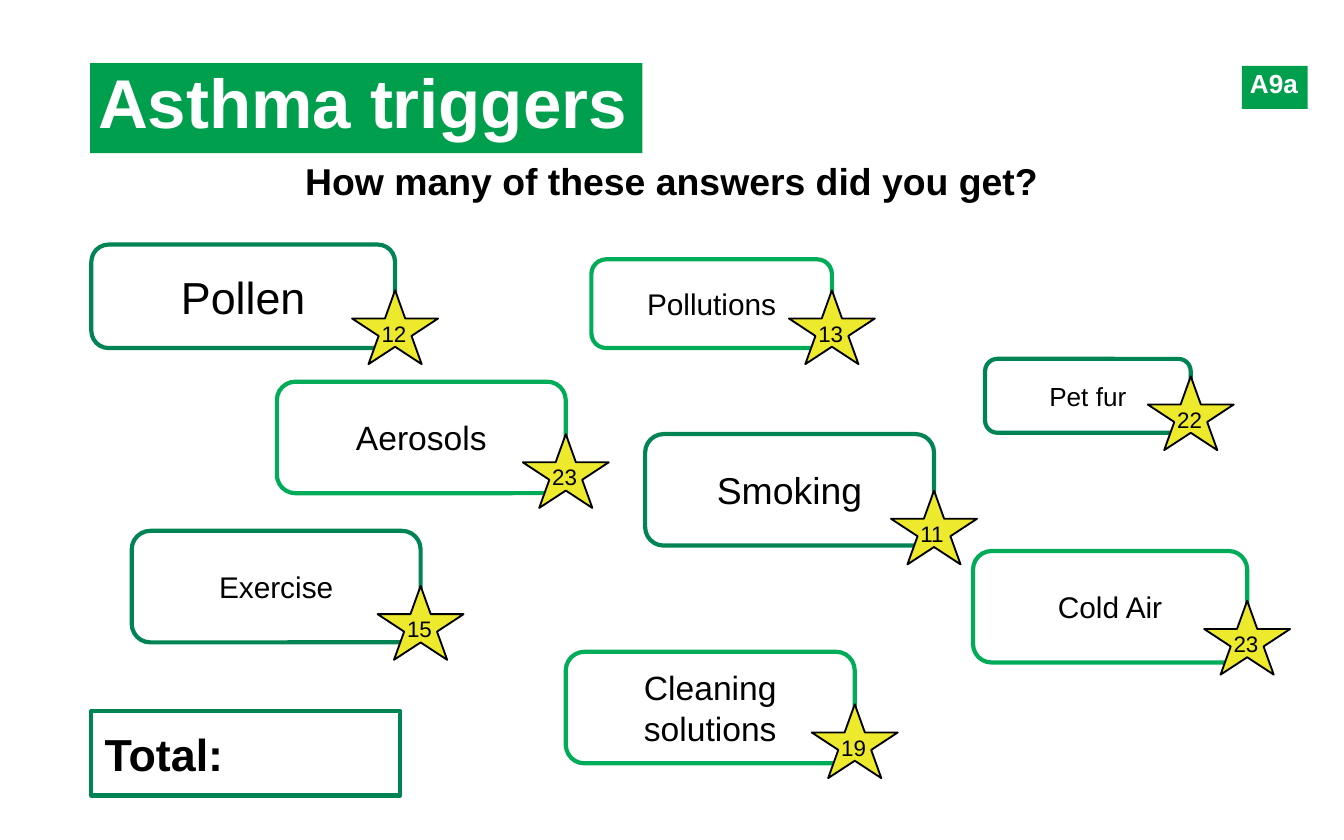
"""Build the asthma triggers answer slide."""
from dataclasses import dataclass

from pptx import Presentation
from pptx.dml.color import RGBColor
from pptx.enum.shapes import MSO_SHAPE
from pptx.enum.text import MSO_ANCHOR, MSO_AUTO_SIZE, PP_ALIGN
from pptx.shapes.autoshape import Shape
from pptx.slide import Slide
from pptx.util import Inches, Pt

RECTANGLE, ROUNDED, STAR = MSO_SHAPE.RECTANGLE, MSO_SHAPE.ROUNDED_RECTANGLE, MSO_SHAPE.STAR_5_POINT
LEFT, CENTER = PP_ALIGN.LEFT, PP_ALIGN.CENTER
TOP, MIDDLE = MSO_ANCHOR.TOP, MSO_ANCHOR.MIDDLE
FIT_SHAPE, FIXED_SIZE = MSO_AUTO_SIZE.SHAPE_TO_FIT_TEXT, MSO_AUTO_SIZE.NONE

COLORS = {
    "banner": "009F4D",
    "dark": "008453",
    "light": "00AC58",
    "star": "EDE92C",
    "black": "000000",
    "white": "FFFFFF",
}
FONT = "Arial"
SLIDE_WIDTH, SLIDE_HEIGHT = Inches(10), Inches(6.25)
CELL = SLIDE_WIDTH / 100
STAR_WIDTH, STAR_HEIGHT = 6.4, 5.5
SCORE_SHIFT = (1.2, 1.7)


@dataclass(frozen=True)
class Area:
    """Columns and rows on a grid of square cells, 100 across the slide."""

    column: float
    row: float
    columns: float
    rows: float

    def emu(self) -> tuple[int, ...]:
        """Return left, top, width and height in EMU."""
        return tuple(round(cells * CELL) for cells in (self.column, self.row, self.columns, self.rows))


@dataclass(frozen=True)
class Trigger:
    """One answer card with the score shown on its star."""

    label: str
    score: int
    area: Area
    outline: str
    size: int
    star_row: float


TRIGGERS = (
    Trigger("Aerosols", 23, Area(20.6, 28.4, 21.5, 8.3), "light", 18, 32.3),
    Trigger("Pollen", 12, Area(6.8, 18.2, 22.6, 7.7), "dark", 24, 21.6),
    Trigger("Pollutions", 13, Area(44, 19.3, 17.9, 6.6), "light", 16, 21.6),
    Trigger("Pet fur", 22, Area(73.3, 26.7, 15.3, 5.5), "dark", 14, 28),
    Trigger("Smoking", 11, Area(48, 32.3, 21.5, 8.3), "dark", 20, 36.5),
    Trigger("Exercise", 15, Area(9.8, 39.5, 21.5, 8.3), "dark", 16, 43.6),
    Trigger("Cold Air", 23, Area(72.4, 41, 20.4, 8.3), "light", 16, 44.7),
    Trigger("Cleaning solutions", 19, Area(42.1, 48.5, 21.5, 8.3), "light", 18, 52.4),
)


def rgb(name: str) -> RGBColor:
    """Look up a named colour."""
    return RGBColor.from_string(COLORS[name])


def write(shape: Shape, text: str, size: int, color: str = "black", bold: bool = False,
          align: PP_ALIGN = LEFT, anchor: MSO_ANCHOR = TOP) -> None:
    """Set and format the single paragraph of a shape."""
    frame = shape.text_frame
    frame.text = text
    frame.word_wrap = True
    frame.vertical_anchor = anchor
    paragraph = frame.paragraphs[0]
    paragraph.alignment = align
    font = paragraph.runs[0].font
    font.name, font.size, font.bold = FONT, Pt(size), bold
    font.color.rgb = rgb(color)


def add_outlined(slide: Slide, kind: MSO_SHAPE, area: Area, outline: str,
                 weight: float, fill: str | None = None) -> Shape:
    """Add a preset shape with a line and an optional fill."""
    shape = slide.shapes.add_shape(kind, *area.emu())
    shape.shadow.inherit = False
    shape.line.color.rgb = rgb(outline)
    shape.line.width = Pt(weight)
    if fill:
        shape.fill.solid()
        shape.fill.fore_color.rgb = rgb(fill)
    else:
        shape.fill.background()
    return shape


def format_banner(shape: Shape, text: str, size: int) -> None:
    """Make a green banner with white text."""
    shape.fill.solid()
    shape.fill.fore_color.rgb = rgb("banner")
    write(shape, text, size, "white", bold=True)
    frame = shape.text_frame
    frame.margin_left = frame.margin_right = frame.margin_bottom = Inches(0.06)
    frame.margin_top = Inches(0.04)
    frame.auto_size = FIXED_SIZE
    frame.paragraphs[0].line_spacing = 0.9


def add_trigger(slide: Slide, trigger: Trigger) -> None:
    """Draw a card, its star centred on the right edge, and the score."""
    card = add_outlined(slide, ROUNDED, trigger.area, trigger.outline, 2.25)
    write(card, trigger.label, trigger.size, align=CENTER, anchor=MIDDLE)
    star_column = trigger.area.column + trigger.area.columns - STAR_WIDTH / 2
    star_area = Area(star_column, trigger.star_row, STAR_WIDTH, STAR_HEIGHT)
    add_outlined(slide, STAR, star_area, "black", 1, "star")
    shift_right, shift_down = SCORE_SHIFT
    score_area = Area(star_column + shift_right, trigger.star_row + shift_down, 5.1, 3)
    score = slide.shapes.add_textbox(*score_area.emu())
    write(score, str(trigger.score), 12)
    score.text_frame.auto_size = FIT_SHAPE


def main() -> None:
    """Assemble and save the slide."""
    deck = Presentation()
    deck.slide_width, deck.slide_height = SLIDE_WIDTH, SLIDE_HEIGHT
    slide = deck.slides.add_slide(deck.slide_layouts[5])

    title = slide.shapes.title
    title.left, title.top, title.width, title.height = Area(6.7, 4.7, 41.1, 6.7).emu()
    format_banner(title, "Asthma triggers", 37)
    card_code = slide.shapes.add_textbox(*Area(92.4, 4.9, 4.9, 3.2).emu())
    format_banner(card_code, "A9a", 14)
    card_code.text_frame.word_wrap = False
    card_code.text_frame.auto_size = FIT_SHAPE

    question = slide.shapes.add_textbox(*Area(0, 11.4, 100, 39.7).emu())
    write(question, "How many of these answers did you get?", 20, bold=True, align=CENTER)
    question.text_frame.margin_top = Inches(0.04)

    for trigger in TRIGGERS:
        add_trigger(slide, trigger)

    total = add_outlined(slide, RECTANGLE, Area(6.8, 52.9, 23, 6.3), "dark", 2.25)
    write(total, "Total:", 24, bold=True, anchor=MIDDLE)
    deck.save("out.pptx")


if __name__ == "__main__":
    main()
